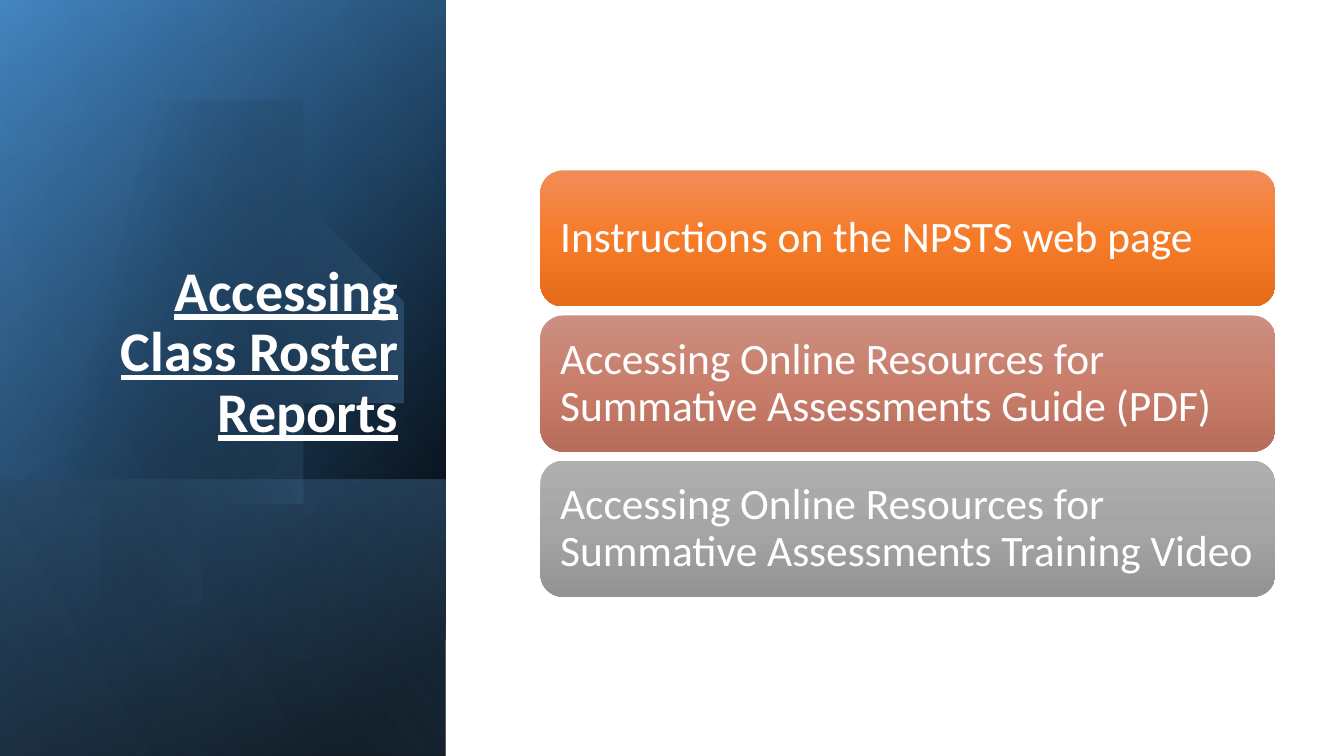
import pptx
import pptx.util
import pptx.oxml
import pptx.oxml.ns
import pptx.dml.color
import pptx.enum.shapes
import pptx.enum.text

# Content
TITLE = "Accessing Class Roster Reports"
CARDS = [
    ("Instructions on the NPSTS web page", "orange"),
    ("Accessing Online Resources for Summative Assessments Guide (PDF)", "clay"),
    ("Accessing Online Resources for Summative Assessments Training Video", "gray"),
]
COLORS = {
    "white": "FFFFFF", "black": "000000",
    "deep": "2E75B6", "blue": "5B9BD5", "pale": "9DC3E6",
    "orange": ("F18C57", "F67B28", "E56C19"),
    "clay": ("CB8F81", "C97E6B", "B76D5B"),
    "gray": ("AFAFAF", "A5A5A5", "939393"),
}

# Gradient stops: position %, colour, opacity %
SIDE = 4.42  # width of the side panel
BASE = [  # top, height, stops, angle
    (0, 7.5, [(8, "black", 100), (100, "deep", 100)], 50),
    (0, 7.5, [(0, "black", 0), (99, "blue", 46)], 30),
    (4.76, 2.74, [(2, "blue", 29), (100, "black", 30)], 130),
]
GLOW = (0, 7.5, [(0, "black", 0), (99, "pale", 11)], 120)

# Round outline: start, curves (two handles and an end), then corners
START = (1.49, 1.1)
ARCS = [
    ((2.46, 1.12), (3.35, 1.77), (3.63, 2.75)),
    ((3.98, 3.97), (3.28, 5.23), (2.07, 5.58)),
    ((1.31, 5.8), (0.53, 5.61), (-0.03, 5.14)),
]
EDGE = [(-0.15, 5.03), (-0.15, 1.75), (0, 1.61)]
LAST = [((0.23, 1.42), (0.5, 1.28), (0.8, 1.19)),
        ((1.03, 1.13), (1.26, 1.1), START)]
DISC = [(29, "black", 0), (100, "blue", 43)]

LEFT, TOP, WIDE, HIGH, STEP = 5.36, 1.69, 7.29, 1.35, 1.44
INSET = 0.13

Inches = pptx.util.Inches
Kind = pptx.enum.shapes.MSO_SHAPE
Align = pptx.enum.text.PP_ALIGN
Anchor = pptx.enum.text.MSO_ANCHOR
qn = pptx.oxml.ns.qn


def assign(item, values):
    for name, value in values.items():
        setattr(item, name, value)


def shade(shape, stops, angle):
    """Fill with a gradient; stops hold hex colours."""
    shape.shadow.inherit = False
    shape.line.fill.background()
    shape.fill.background()
    marks = "".join(
        f'<a:gs pos="{pos * 1000}"><a:srgbClr val="{color}">'
        f'<a:alpha val="{alpha * 1000}"/></a:srgbClr></a:gs>'
        for pos, color, alpha in stops)
    grad = pptx.oxml.parse_xml(
        f'<a:gradFill {pptx.oxml.ns.nsdecls("a")} rotWithShape="1">'
        f'<a:gsLst>{marks}</a:gsLst>'
        f'<a:lin ang="{angle * 60000}" scaled="0"/></a:gradFill>')
    props = shape.element.spPr
    props.replace(props.find(qn("a:noFill")), grad)


def tint(stops):
    return [(pos, COLORS[name], alpha) for pos, name, alpha in stops]


def panel(shapes, top, high, stops, angle):
    """Add a side panel turned a quarter and mirrored."""
    shape = shapes.add_shape(
        Kind.RECTANGLE, Inches((SIDE - high) / 2),
        Inches(top + (high - SIDE) / 2), Inches(high), Inches(SIDE))
    shape.rotation = 90
    shape.element.spPr.find(qn("a:xfrm")).set("flipH", "1")
    shade(shape, tint(stops), angle)


def trace(start, arcs, count=24):
    """List points along a chain of cubic curves."""
    points = []
    for one, two, end in arcs:
        for i in range(1, count + 1):
            t = i / count
            u = 1 - t
            points.append(tuple(
                u**3 * a + 3 * u * u * t * b + 3 * u * t * t * c + t**3 * d
                for a, b, c, d in zip(start, one, two, end)))
        start = end
    return points


def write(shape, text, frame, para, font):
    body = shape.text_frame
    body.text = text
    assign(body, frame)
    line = body.paragraphs[0]
    assign(line, {"line_spacing": 0.9, **para})
    assign(line.runs[0].font, {"name": "Calibri", **font})
    line.runs[0].font.color.rgb = pptx.dml.color.RGBColor.from_string(COLORS["white"])


def main():
    deck = pptx.Presentation()
    assign(deck, {"slide_width": Inches(13.33), "slide_height": Inches(7.5)})
    slide = deck.slides.add_slide(deck.slide_layouts[5])
    shapes = slide.shapes

    # Side panel with its disc
    for layer in BASE:
        panel(shapes, *layer)
    points = trace(START, ARCS) + EDGE + trace(EDGE[-1], LAST)
    pen = shapes.build_freeform(*START, scale=Inches(1))
    pen.add_line_segments(points, close=True)
    shade(pen.convert_to_shape(), tint(DISC), 14)
    panel(shapes, *GLOW)

    # Title, brought in front of the panel
    title = shapes.title
    assign(title, {"left": Inches(0.64), "top": Inches(1.84),
                   "width": Inches(3.41), "height": Inches(2.62)})
    write(title, TITLE,
          {"vertical_anchor": Anchor.BOTTOM, "word_wrap": True,
           "auto_size": pptx.enum.text.MSO_AUTO_SIZE.NONE},
          {"alignment": Align.RIGHT},
          {"size": pptx.util.Pt(40), "bold": True, "underline": True})
    title.element.getparent().append(title.element)

    # Cards
    sides = ("left", "top", "right", "bottom")
    frame = {f"margin_{side}": Inches(INSET) for side in sides}
    frame.update(vertical_anchor=Anchor.MIDDLE, word_wrap=True)
    for i, (text, hue) in enumerate(CARDS):
        card = shapes.add_shape(Kind.ROUNDED_RECTANGLE, Inches(LEFT),
                                Inches(TOP + i * STEP), Inches(WIDE), Inches(HIGH))
        shade(card, [(50 * k, color, 100) for k, color in enumerate(COLORS[hue])], 90)
        write(card, text, frame, {"alignment": Align.LEFT},
              {"size": pptx.util.Pt(31)})

    deck.save("out.pptx")


if __name__ == "__main__":
    main()
